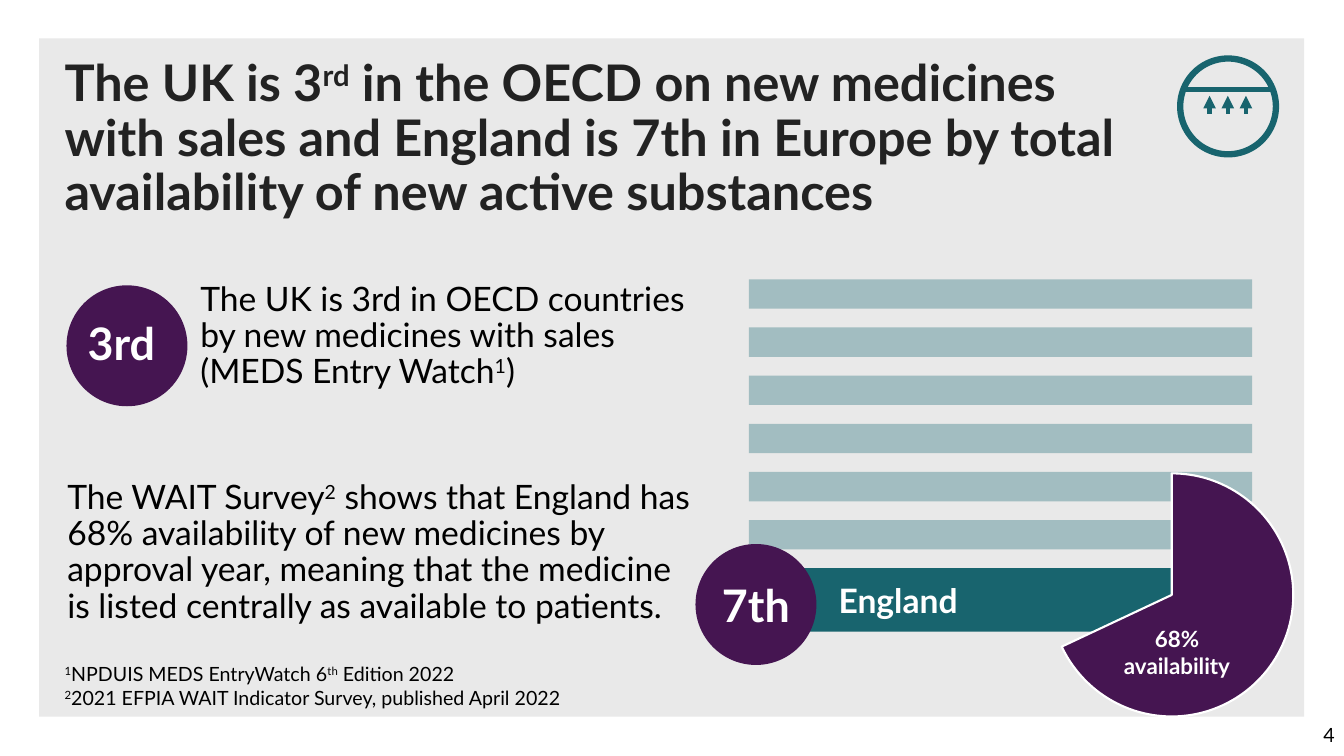
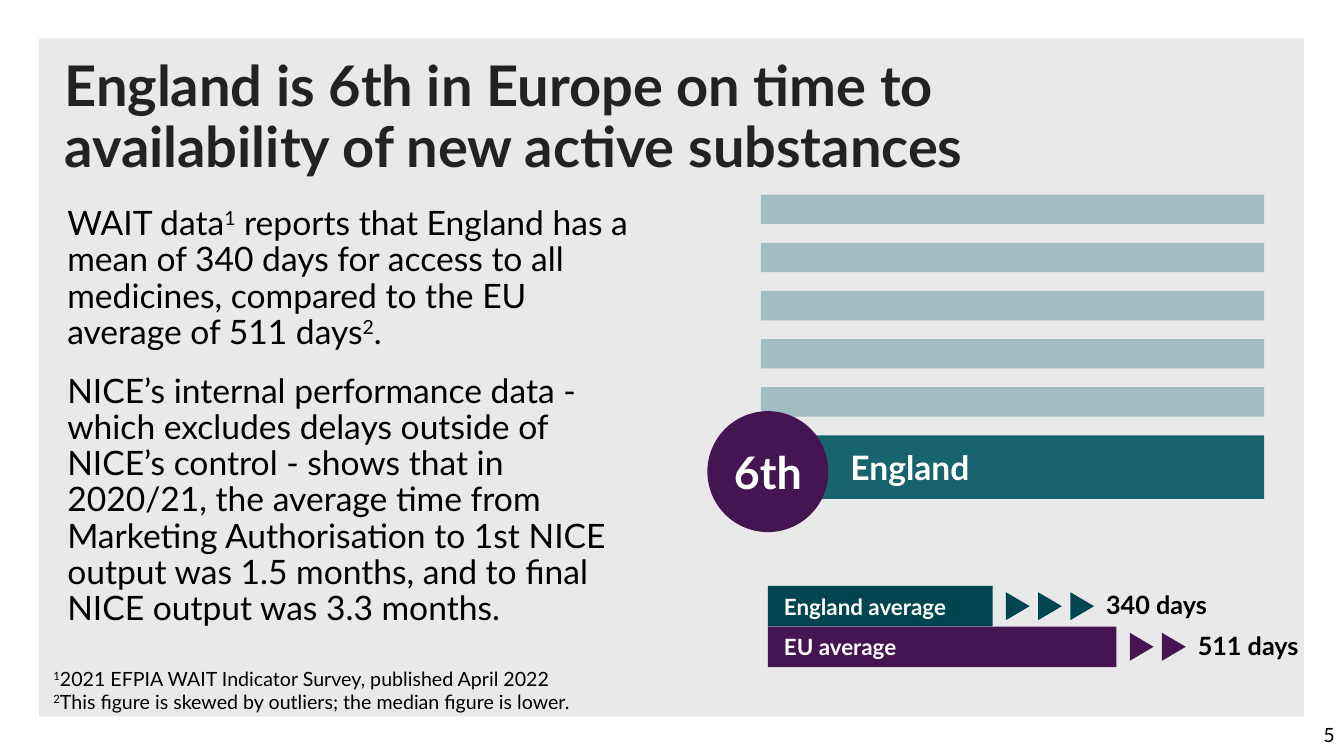
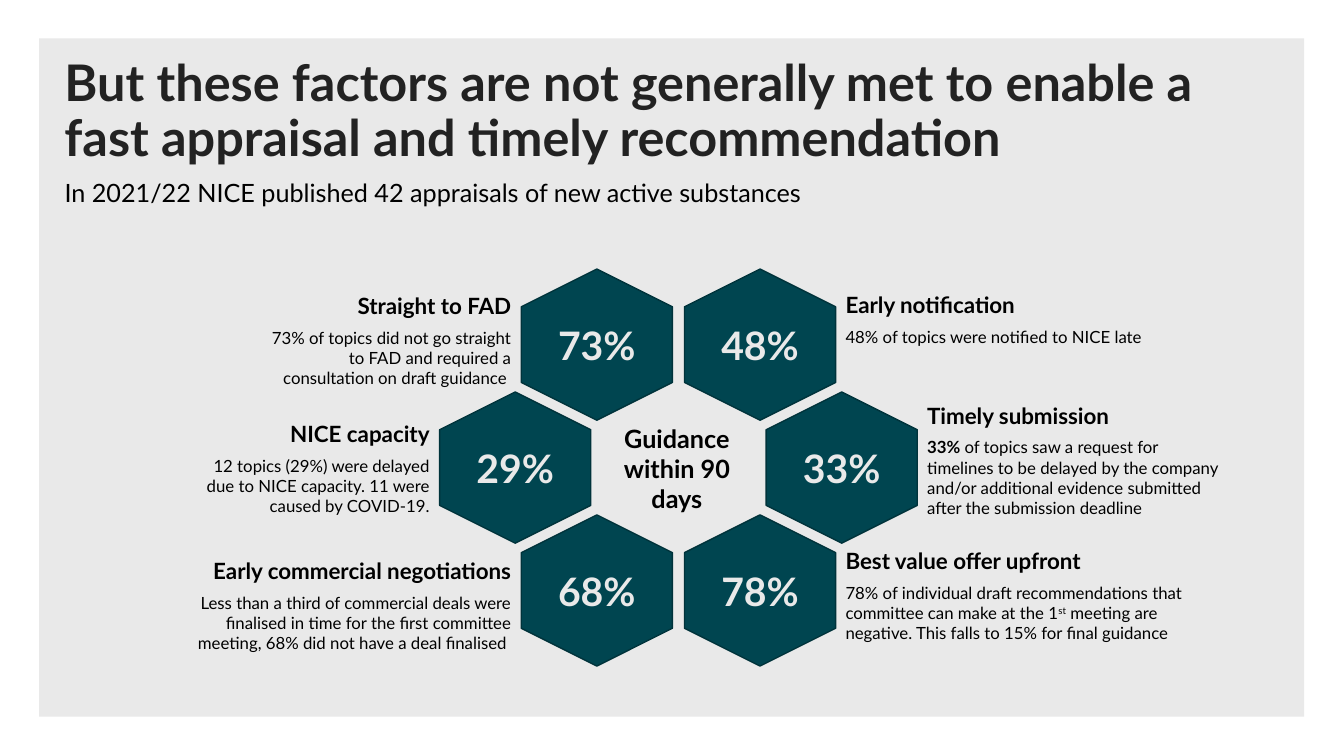
from pptx import Presentation
from pptx import util as u
from pptx.chart import data
from pptx.dml import color
from pptx.enum import chart as ch, shapes, text
from pptx.oxml import parse_xml
from pptx.oxml import ns
from lxml import etree

Pt = u.Pt
RGB = color.RGBColor
SHAPE = shapes.MSO_SHAPE
LEFT, CENTER, RIGHT = text.PP_ALIGN.LEFT, text.PP_ALIGN.CENTER, text.PP_ALIGN.RIGHT
TOP, MIDDLE = text.MSO_ANCHOR.TOP, text.MSO_ANCHOR.MIDDLE

WHITE = RGB(0xFF, 0xFF, 0xFF)
BLACK = RGB(0x00, 0x00, 0x00)
PANEL = RGB(0xE9, 0xE9, 0xE9)
TITLE = RGB(0x22, 0x22, 0x22)
PALE = RGB(0xA2, 0xBD, 0xC1)
TEAL = RGB(0x18, 0x64, 0x6E)
DEEP = RGB(0x00, 0x45, 0x50)
EDGE = RGB(0x00, 0x33, 0x3B)
PURPLE = RGB(0x45, 0x15, 0x51)

FONT = "Lato"
BODY = {"line_spacing": 0.9, "space_after": Pt(6)}
BAR_PITCH, BAR_WIDTH = 34.4, 359.5
ARROW_PITCH = 23
HEX, HEX_DX, HEX_DY = 108, 116.6, 87.8
RING_X, RING_Y = 484.6, 334


def apply(target, values):
    for name, value in values.items():
        setattr(target, name, value)


def style(font, size, rgb, bold):
    apply(font, {"name": FONT, "size": Pt(size), "bold": bold})
    font.color.rgb = rgb


def fill_paragraph(p, content, size, rgb=BLACK, bold=False, **fmt):
    """Asterisks toggle bold and carets toggle superscript."""
    apply(p, fmt)
    for i, part in enumerate(content.split("*")):
        for j, piece in enumerate(part.split("^")):
            if piece:
                r = p.add_run()
                r.text = piece
                style(r.font, size, rgb, bold or i % 2 == 1)
                if j % 2:
                    r._r.get_or_add_rPr().set("baseline", "30000")


def add_text(s, x, y, w, h, lines, size, rgb=BLACK, bold=False, anchor=TOP, gap=0, **fmt):
    tf = s.shapes.add_textbox(Pt(x), Pt(y), Pt(w), Pt(h)).text_frame
    apply(tf, {"word_wrap": True, "vertical_anchor": anchor})
    for i, line in enumerate(lines):
        p = tf.paragraphs[0] if i == 0 else tf.add_paragraph()
        fill_paragraph(p, line, size, rgb, bold, space_before=Pt(gap if i else 0), **fmt)
    return tf


def add_shape(s, kind, x, y, w, h, fill=None, line=None, weight=1):
    sp = s.shapes.add_shape(kind, Pt(x), Pt(y), Pt(w), Pt(h))
    sp.shadow.inherit = False
    if fill is None:
        sp.fill.background()
    else:
        sp.fill.solid()
        sp.fill.fore_color.rgb = fill
    if line is None:
        sp.line.fill.background()
    else:
        sp.line.color.rgb = line
        sp.line.width = Pt(weight)
    return sp


def add_bar(s, x, y, w, h, fill, label="", size=16, inset=0):
    tf = add_shape(s, SHAPE.RECTANGLE, x, y, w, h, fill).text_frame
    if label:
        apply(tf, {"margin_left": Pt(inset), "margin_top": 0, "margin_bottom": 0,
                   "vertical_anchor": MIDDLE})
        fill_paragraph(tf.paragraphs[0], label, size, WHITE, True, alignment=LEFT)


def add_badge(s, x, y, label, right=0, bottom=0):
    tf = add_shape(s, SHAPE.OVAL, x, y, 86.4, 86.4, PURPLE).text_frame
    apply(tf, {"margin_left": 0, "margin_top": 0, "margin_right": Pt(right),
               "margin_bottom": Pt(bottom), "vertical_anchor": MIDDLE})
    fill_paragraph(tf.paragraphs[0], label, 32, WHITE, True, alignment=CENTER)


def add_line(s, x1, y1, x2, y2, arrow=False):
    c = s.shapes.add_connector(shapes.MSO_CONNECTOR.STRAIGHT, Pt(x1), Pt(y1), Pt(x2), Pt(y2))
    c.line.color.rgb = TEAL
    c.line.width = Pt(3)
    if arrow:
        etree.SubElement(c.line._get_or_add_ln(), ns.qn("a:tailEnd"), type="triangle")
    etree.SubElement(c._element.spPr, ns.qn("a:effectLst"))


def add_ranking(s, x, y, rank):
    for i in range(rank - 1):
        add_bar(s, x, y + i * BAR_PITCH, BAR_WIDTH, 21, PALE)
    england_y = y + (rank - 1) * BAR_PITCH
    add_bar(s, x, england_y, BAR_WIDTH, 45.4, TEAL, "England", 24, 64)
    add_badge(s, x - 38.2, england_y - 17.3, f"{rank}th")


def add_average(s, y, w, fill, label, days, arrows):
    x = 548.5
    add_bar(s, x, y, w, 29, fill, label, 16, 11.5)
    start = x + w + 8
    for i in range(arrows):
        add_shape(s, SHAPE.ISOSCELES_TRIANGLE, start + i * ARROW_PITCH, y + 6, 20, 17,
                  fill).rotation = 90
    add_text(s, start + arrows * ARROW_PITCH - 3, y - 1, 89, 29, [days], 18, bold=True)


def add_pie(s, x, y, size):
    cd = data.CategoryChartData()
    cd.categories = ["1", "2", "3", "4"]
    cd.add_series("Series 1", (68, 32, None, None))
    chart = s.shapes.add_chart(ch.XL_CHART_TYPE.PIE, Pt(x), Pt(y), Pt(size), Pt(size), cd).chart
    apply(chart, {"has_legend": False, "has_title": False})
    style(chart.font, 10, BLACK, False)
    plot = chart.plots[0]
    plot.vary_by_categories = True
    available, rest = (plot.series[0].points[i].format for i in range(2))
    available.fill.solid()
    available.fill.fore_color.rgb = PURPLE
    available.line.color.rgb = WHITE
    available.line.width = Pt(1.5)
    rest.fill.background()
    rest.line.fill.background()
    area = chart._chartSpace.chart.plotArea
    for old in area.findall(ns.qn("c:layout")):
        area.remove(old)
    area.insert(0, parse_xml(
        f'<c:layout {ns.nsdecls("c")}><c:manualLayout><c:layoutTarget val="inner"/>'
        '<c:xMode val="edge"/><c:yMode val="edge"/><c:x val="0.05"/><c:y val="0.05"/>'
        '<c:w val="0.9"/><c:h val="0.9"/></c:manualLayout></c:layout>'))


def add_icon(s):
    add_shape(s, SHAPE.OVAL, 843, 41.8, 68.4, 68.4, line=TEAL, weight=4.5)
    add_line(s, 845.3, 64, 909.4, 64)
    for i in range(3):
        x = 864 + i * 13
        add_line(s, x, 81.4, x, 68.4, arrow=True)


def add_factor(s, col, row, percent, heading, detail, y, w):
    x = RING_X + col * HEX_DX - HEX / 2
    top = RING_Y + row * HEX_DY - HEX / 2
    add_shape(s, SHAPE.HEXAGON, x, top, HEX, HEX, DEEP, EDGE).rotation = 90
    add_text(s, x, top, HEX, HEX, [percent], 28, PANEL, True, MIDDLE, alignment=CENTER)
    fmt = {"alignment": RIGHT if col < 0 else LEFT, "space_after": Pt(6)}
    label_x = x - w if col < 0 else x + HEX
    tf = add_text(s, label_x, y, w, 76, [heading], 16, bold=True, **fmt)
    fill_paragraph(tf.add_paragraph(), detail, 12, **fmt)


def new_slide(prs, title, size, width, number=None):
    s = prs.slides.add_slide(prs.slide_layouts[6])
    add_shape(s, SHAPE.RECTANGLE, 28, 27.5, 903.5, 484.5, PANEL)
    add_text(s, 39, 38, width, 101, [title], size, TITLE, True, line_spacing=0.9)
    if number:
        add_text(s, 744.5, 510.5, 216, 29, [number], 14, anchor=MIDDLE, alignment=RIGHT)
    return s


def availability_slide(prs):
    s = new_slide(prs, "The UK is 3^rd^ in the OECD on new medicines with sales and England "
                  "is 7th in Europe by total availability of new active substances", 36, 793.5, "4")
    add_badge(s, 47.5, 203.8, "3rd", 8, 4)
    add_text(s, 136, 198, 380, 80, ["The UK is 3rd in OECD countries by new medicines with sales "
                                    "(MEDS Entry Watch^1^)"], 24, **BODY)
    add_text(s, 41, 339.5, 465, 132,
             ["The WAIT Survey^2^ shows that England has 68% availability of new medicines by "
              "approval year, meaning that the medicine is listed centrally as available to "
              "patients."], 24, **BODY)
    add_ranking(s, 535, 199.5, 7)
    add_pie(s, 740.5, 328.5, 193)
    add_text(s, 790, 443, 101.5, 46, ["68% availability"], 16, WHITE, True, alignment=CENTER)
    add_icon(s)
    add_text(s, 39, 469.5, 633, 41, ["^1^NPDUIS MEDS EntryWatch 6^th^ Edition 2022",
             "^2^2021 EFPIA WAIT Indicator Survey, published April 2022"], 14)


def time_slide(prs):
    s = new_slide(prs, "England is 6th in Europe on time to availability of new active "
                  "substances", 40, 818.5, "5")
    add_text(s, 41, 144, 428.5, 318,
             ["WAIT data^1^ reports that England has a mean of 340 days for access to all "
              "medicines, compared to the EU average of 511 days^2^.",
              "NICE’s internal performance data - which excludes delays outside of NICE’s "
              "control - shows that in 2020/21, the average time from Marketing Authorisation "
              "to 1st NICE output was 1.5 months, and to final NICE output was 3.3 months."],
             24, gap=10, **BODY)
    add_ranking(s, 543.5, 139, 6)
    add_average(s, 418.5, 160.5, DEEP, "England average", "340 days", 3)
    add_average(s, 447.5, 249, PURPLE, "EU average", "511 days", 2)
    add_text(s, 31, 472.5, 633, 41, ["^1^2021 EFPIA WAIT Indicator Survey, published April 2022",
             "^2^This figure is skewed by outliers; the median figure is lower."], 14)


def factors_slide(prs):
    s = new_slide(prs, "But these factors are not generally met to enable a fast appraisal and "
                  "timely recommendation", 36, 872.5)
    add_text(s, 39, 123, 615.5, 29,
             ["In 2021/22 NICE published 42 appraisals of new active substances"], 18)
    add_text(s, 425.5, 298, 116, 73, ["Guidance within 90 days"], 18, bold=True, anchor=MIDDLE,
             alignment=CENTER)
    factors = [
        (-0.5, -1, "73%", "Straight to FAD", "73% of topics did not go straight to FAD and "
         "required a consultation on draft guidance ", 205, 191),
        (0.5, -1, "48%", "Early notification", "48% of topics were notified to NICE late",
         204.5, 244),
        (-1, 0, "29%", "NICE capacity", "12 topics (29%) were delayed due to NICE capacity. "
         "11 were caused by COVID-19.", 296.5, 186.5),
        (1, 0, "33%", "Timely submission", "*33% *of topics saw a request for timelines to be "
         "delayed by the company and/or additional evidence submitted after the submission "
         "deadline", 283.5, 229),
        (-0.5, 1, "68%", "Early commercial negotiations", "Less than a third of commercial deals "
         "were finalised in time for the first committee meeting, 68% did not have a deal "
         "finalised ", 394.5, 256),
        (0.5, 1, "78%", "Best value offer upfront", "78% of individual draft recommendations "
         "that committee can make at the 1^st^ meeting are negative. This falls to 15% for "
         "final guidance", 387.5, 274),
    ]
    for factor in factors:
        add_factor(s, *factor)


def main():
    prs = Presentation()
    apply(prs, {"slide_width": Pt(960), "slide_height": Pt(540)})
    availability_slide(prs)
    time_slide(prs)
    factors_slide(prs)
    prs.save("out.pptx")


if __name__ == "__main__":
    main()
